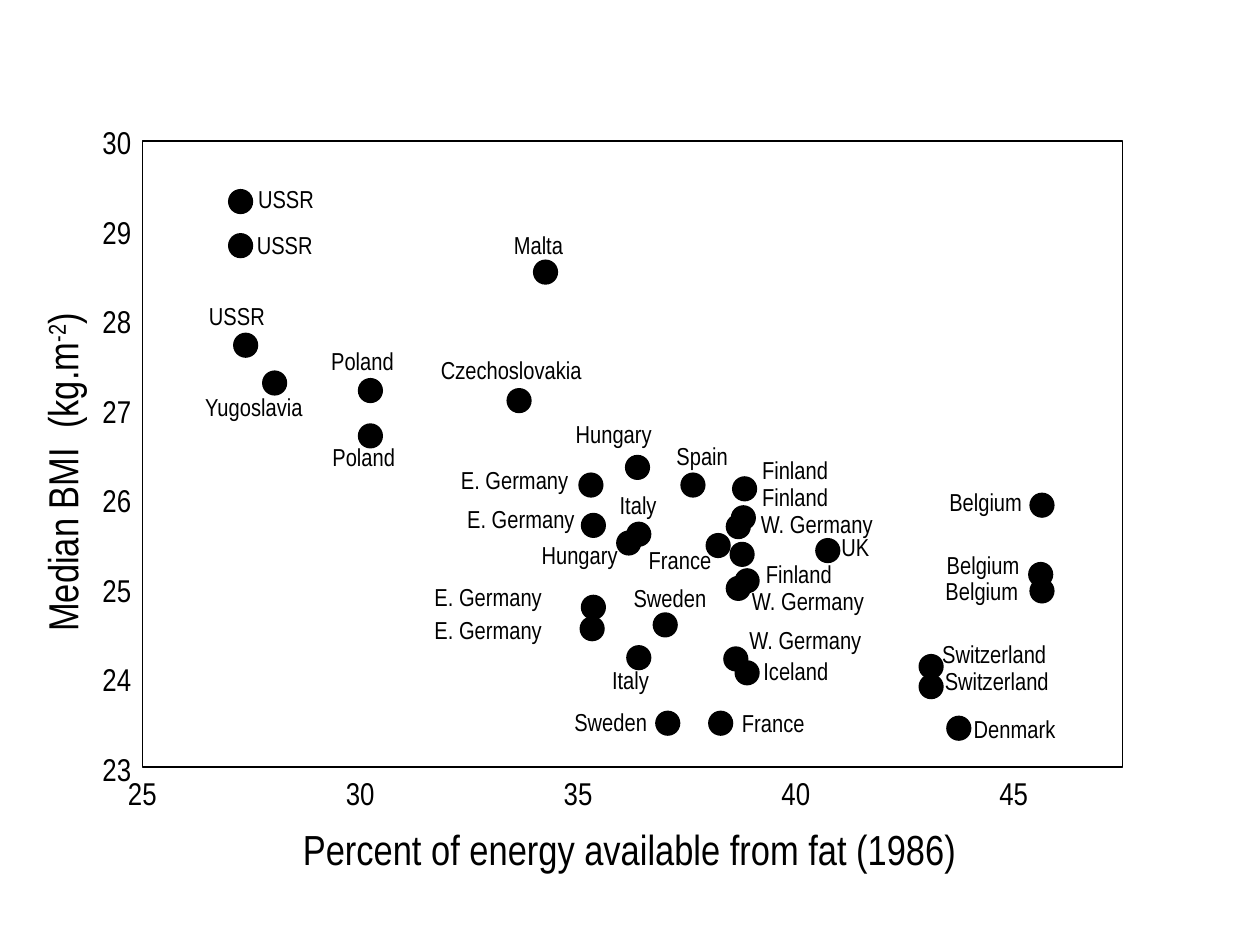
from pptx import Presentation
from pptx.dml.color import RGBColor
from pptx.enum.shapes import MSO_SHAPE
from pptx.enum.text import MSO_AUTO_SIZE, PP_ALIGN
from pptx.util import Inches, Pt

BLACK = RGBColor(0, 0, 0)
FONT = "Arial Narrow"

# Axes: tick values, and the plot frame in inches
X_TITLE = "Percent of energy available from fat (1986)"
Y_TITLE = [("Median BMI  (kg.m", False), ("-2", True), (")", False)]
X_TICKS = [25, 30, 35, 40, 45]
Y_TICKS = [30, 29, 28, 27, 26, 25, 24, 23]
PLOT_LEFT, PLOT_TOP, PLOT_WIDTH, PLOT_HEIGHT = 1.13, 1.12, 7.78, 4.97
X_SPAN = 22.5  # percentage points across the frame
TICK_WIDTH, TICK_HEIGHT = 0.43, 0.4

# Label widths in inches
LABEL_WIDTHS = {
    "USSR": 0.65, "Yugoslavia": 0.98, "Poland": 0.7, "Czechoslovakia": 1.33,
    "Malta": 0.6, "E. Germany": 1.06, "W. Germany": 1.1, "Hungary": 0.81,
    "Spain": 0.61, "Finland": 0.73, "Italy": 0.5, "France": 0.75, "UK": 0.42,
    "Sweden": 0.78, "Iceland": 0.72, "Denmark": 0.86, "Switzerland": 1.03,
    "Belgium": 0.78,
}
LABEL_HEIGHT = 0.34
DOT = 0.2

# Country, top left of its dot, top left of its label
COUNTRIES = [
    ("USSR", (1.81, 1.5), (1.95, 1.41)),
    ("USSR", (1.81, 1.85), (1.94, 1.78)),
    ("USSR", (1.85, 2.64), (1.56, 2.34)),
    ("Yugoslavia", (2.08, 2.94), (1.53, 3.06)),
    ("Poland", (2.84, 3), (2.53, 2.7)),
    ("Poland", (2.84, 3.36), (2.54, 3.46)),
    ("Czechoslovakia", (4.02, 3.08), (3.4, 2.77)),
    ("Malta", (4.23, 2.06), (3.98, 1.78)),
    ("E. Germany", (4.59, 3.75), (3.56, 3.64)),
    ("Hungary", (4.96, 3.61), (4.47, 3.28)),
    ("Spain", (5.4, 3.75), (5.27, 3.45)),
    ("Finland", (5.81, 3.78), (5.95, 3.56)),
    ("E. Germany", (4.61, 4.07), (3.61, 3.95)),
    ("Italy", (4.97, 4.14), (4.82, 3.84)),
    ("Hungary", (4.89, 4.21), (4.2, 4.24)),
    ("Finland", (5.8, 4.01), (5.95, 3.78)),
    ("W. Germany", (5.76, 4.08), (5.94, 3.99)),
    ("France", (5.6, 4.23), (5.05, 4.28)),
    (None, (5.79, 4.3), None),
    ("UK", (6.47, 4.27), (6.58, 4.17)),
    ("Finland", (5.83, 4.51), (5.98, 4.39)),
    ("W. Germany", (5.76, 4.57), (5.87, 4.6)),
    ("Sweden", (5.18, 4.86), (4.93, 4.58)),
    ("E. Germany", (4.61, 4.72), (3.35, 4.57)),
    ("E. Germany", (4.6, 4.89), (3.35, 4.83)),
    ("Italy", (4.97, 5.12), (4.76, 5.23)),
    ("W. Germany", (5.74, 5.13), (5.85, 4.91)),
    ("Iceland", (5.83, 5.24), (5.96, 5.16)),
    ("Sweden", (5.2, 5.64), (4.46, 5.56)),
    ("France", (5.62, 5.64), (5.79, 5.57)),
    ("Denmark", (7.51, 5.68), (7.63, 5.62)),
    ("Switzerland", (7.29, 5.35), (7.4, 5.24)),
    ("Switzerland", (7.29, 5.19), (7.38, 5.02)),
    ("Belgium", (8.17, 4.59), (7.4, 4.52)),
    ("Belgium", (8.16, 4.46), (7.41, 4.32)),
    ("Belgium", (8.17, 3.91), (7.43, 3.82)),
]


def add_text(slide, runs, left, top, width, height, size, align):
    box = slide.shapes.add_textbox(*map(Inches, (left, top, width, height)))
    frame = box.text_frame
    frame.word_wrap = False
    frame.auto_size = MSO_AUTO_SIZE.SHAPE_TO_FIT_TEXT
    paragraph = frame.paragraphs[0]
    paragraph.alignment = align
    paragraph.font.name = FONT
    paragraph.font.size = Pt(size)
    paragraph.font.color.rgb = BLACK
    for text, raised in runs:
        run = paragraph.add_run()
        run.text = text
        if raised:
            run.font._element.set("baseline", "30000")
    return box


def add_outline(slide, kind, left, top, width, height):
    shape = slide.shapes.add_shape(kind, *map(Inches, (left, top, width, height)))
    shape.shadow.inherit = False
    return shape


def main():
    prs = Presentation()
    prs.slide_width, prs.slide_height = Inches(10), Inches(7.5)
    slide = prs.slides.add_slide(prs.slide_layouts[6])

    # Plot frame
    plot = add_outline(slide, MSO_SHAPE.RECTANGLE,
                       PLOT_LEFT, PLOT_TOP, PLOT_WIDTH, PLOT_HEIGHT)
    plot.fill.background()
    plot.line.color.rgb = BLACK
    plot.line.width = Pt(1)

    # Dots
    for _, (left, top), _ in COUNTRIES:
        dot = add_outline(slide, MSO_SHAPE.OVAL, left, top, DOT, DOT)
        dot.fill.solid()
        dot.fill.fore_color.rgb = BLACK
        dot.line.fill.background()

    # Axis titles
    add_text(slide, [(X_TITLE, False)], 2.28, 6.49, 5.43, 0.5, 24, PP_ALIGN.CENTER)
    y_title = add_text(slide, Y_TITLE, -0.89, 3.5, 2.76, 0.5, 24, PP_ALIGN.CENTER)
    y_title.rotation = 270

    # Tick labels
    for value in X_TICKS:
        center = PLOT_LEFT + (value - X_TICKS[0]) / X_SPAN * PLOT_WIDTH
        add_text(slide, [(str(value), False)], center - TICK_WIDTH / 2,
                 PLOT_TOP + PLOT_HEIGHT, TICK_WIDTH, TICK_HEIGHT, 18, PP_ALIGN.CENTER)
    y_step = PLOT_HEIGHT / (len(Y_TICKS) - 1)
    for row, value in enumerate(Y_TICKS):
        add_text(slide, [(str(value), False)], PLOT_LEFT - TICK_WIDTH + 0.01,
                 PLOT_TOP + row * y_step - TICK_HEIGHT / 2 + 0.01,
                 TICK_WIDTH, TICK_HEIGHT, 18, PP_ALIGN.RIGHT)

    # Country labels
    for country, _, label in COUNTRIES:
        if country:
            align = PP_ALIGN.RIGHT if country == "Belgium" else PP_ALIGN.LEFT
            add_text(slide, [(country, False)], *label, LABEL_WIDTHS[country],
                     LABEL_HEIGHT, 14, align)

    prs.save("out.pptx")


if __name__ == "__main__":
    main()
